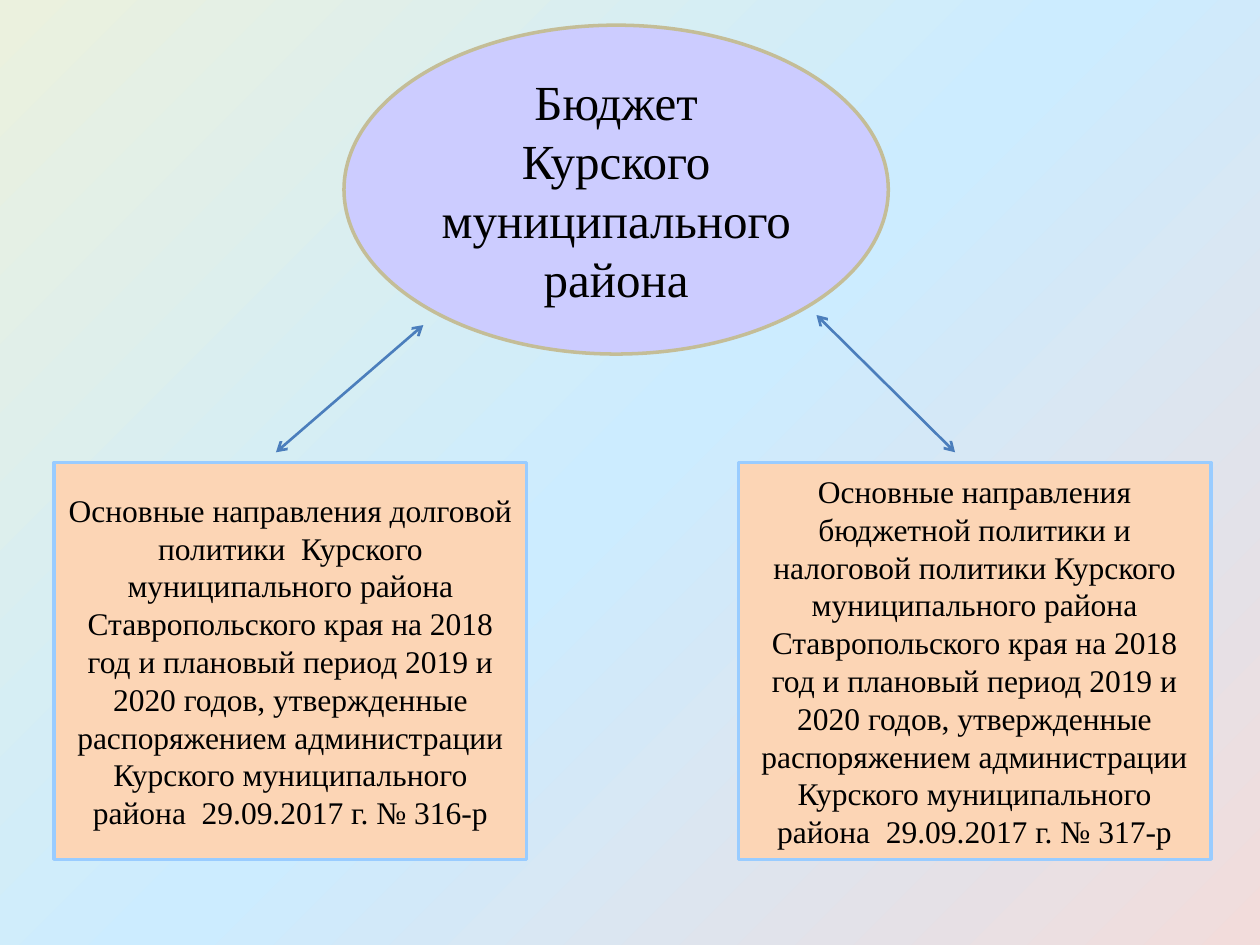
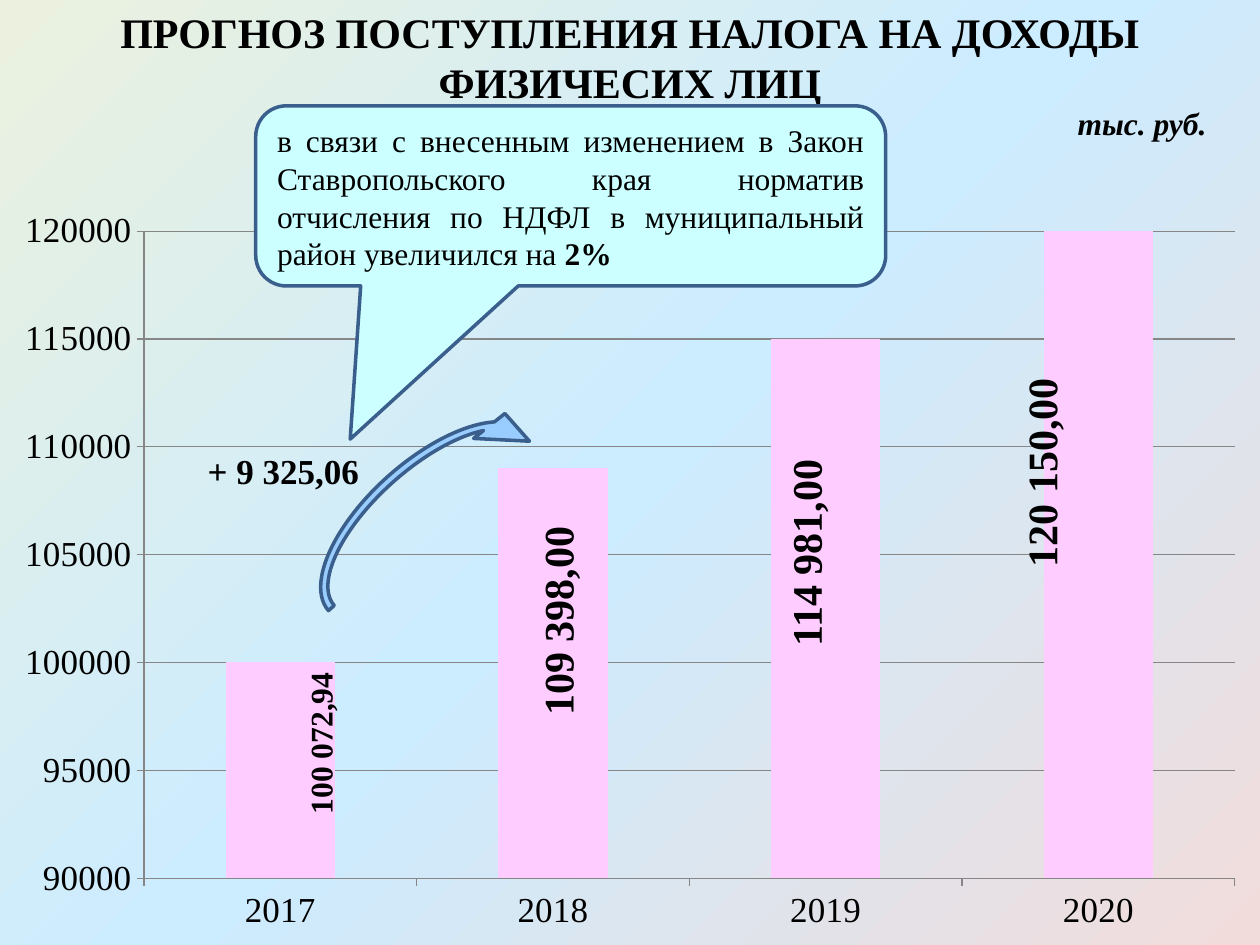
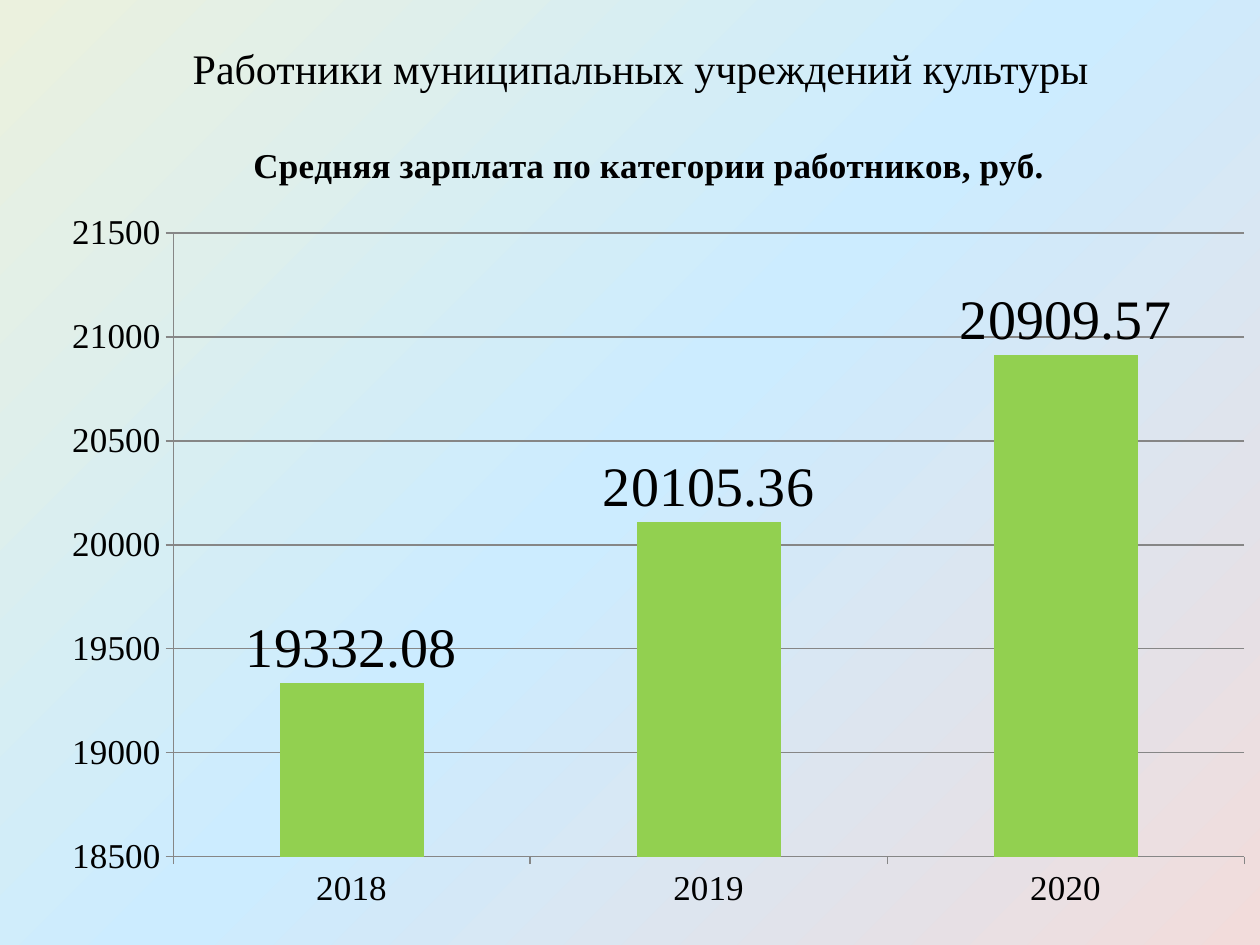
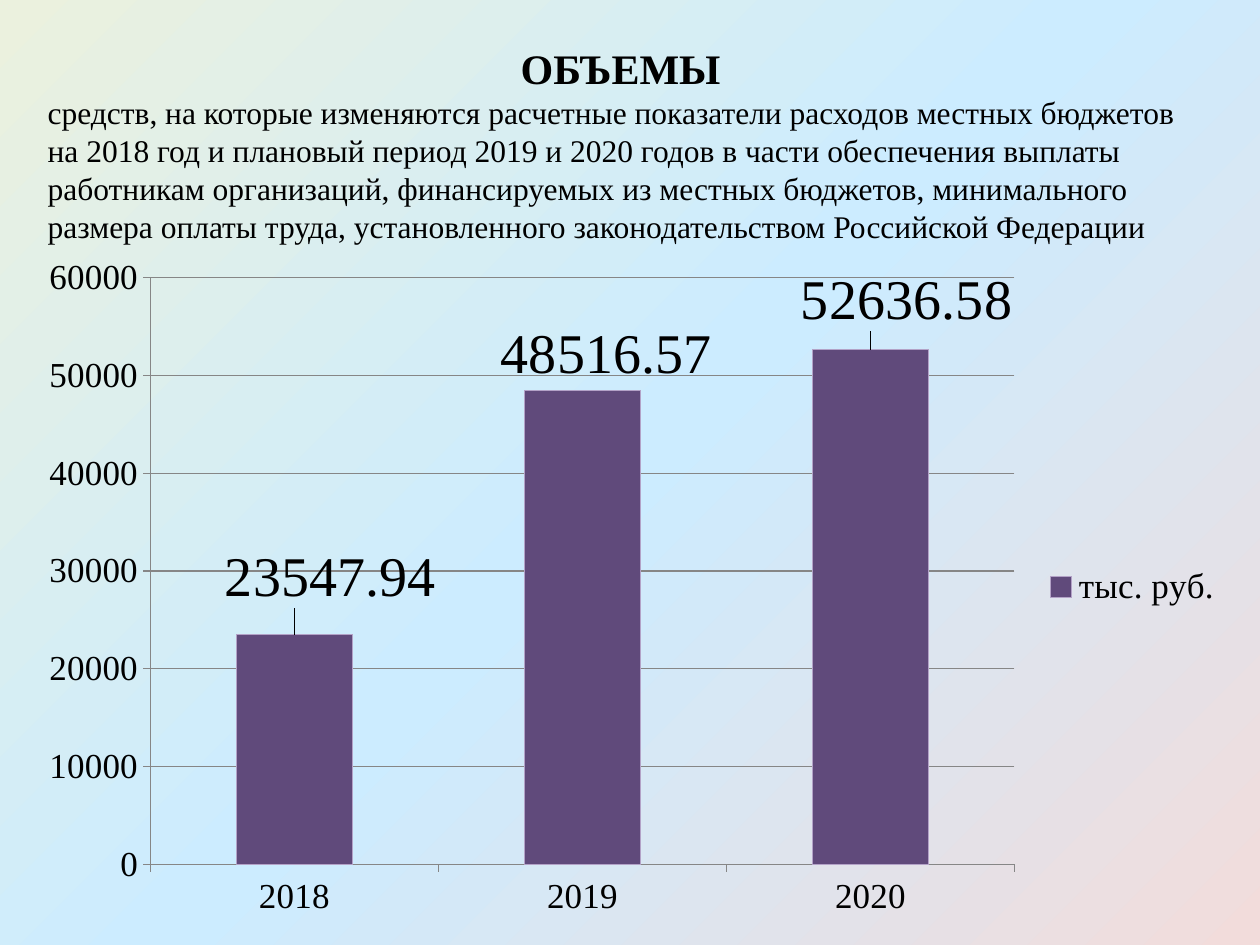
"""Build four slides on the budget of a municipal district."""
import pptx
import pptx.chart.data
import pptx.dml.color
import pptx.enum.chart
import pptx.enum.shapes
import pptx.enum.text
import pptx.oxml
import pptx.oxml.ns
import pptx.util
from lxml import etree

Inches = pptx.util.Inches
Pt = pptx.util.Pt
RGB = pptx.dml.color.RGBColor.from_string
ALIGN = pptx.enum.text.PP_ALIGN
SHAPE = pptx.enum.shapes.MSO_SHAPE
qn = pptx.oxml.ns.qn
FONT = "Times New Roman"
COLORS = {
    "text": "000000",
    "back_start": "F2DCDB",
    "back_middle": "CCECFF",
    "back_end": "EBF1DE",
    "ellipse": "CCCCFF",
    "ellipse_line": "C4BD97",
    "box": "FCD5B5",
    "box_line": "99CCFF",
    "arrow": "4B7EBC",
    "curve": "99CCFF",
    "callout": "CCFFFF",
    "callout_line": "3A5F8C",
    "grid": "868686",
    "tax": "FFCCFF",
    "salary": "92D050",
    "wage": "604A7B",
    "wage_line": "B3A2C7",
}


def add_text(slide, box, paragraphs, preset=None, fill=None, line=None, anchor="TOP"):
    """Add a text box or preset shape; paragraphs are (alignment, runs), runs (text, size, style)."""
    lengths = [Inches(value) for value in box]
    if preset is None:
        shape = slide.shapes.add_textbox(*lengths)
        shape.text_frame.auto_size = pptx.enum.text.MSO_AUTO_SIZE.SHAPE_TO_FIT_TEXT
    else:
        shape = slide.shapes.add_shape(preset, *lengths)
        shape.shadow.inherit = False
        shape.fill.solid()
        shape.fill.fore_color.rgb = RGB(COLORS[fill])
        shape.line.color.rgb = RGB(COLORS[line])
        shape.line.width = Pt(2)
    frame = shape.text_frame
    frame.word_wrap = True
    frame.vertical_anchor = getattr(pptx.enum.text.MSO_ANCHOR, anchor)
    for index, (alignment, runs) in enumerate(paragraphs):
        paragraph = frame.add_paragraph() if index else frame.paragraphs[0]
        paragraph.alignment = alignment
        for text, size, style in runs:
            if text == "\n":
                paragraph.add_line_break()
                continue
            run = paragraph.add_run()
            run.text = text
            run.font.name = FONT
            run.font.size = Pt(size)
            run.font.bold = "b" in style
            run.font.italic = "i" in style
            run.font.color.rgb = RGB(COLORS["text"])
    return shape


def add_column_chart(slide, box, name, values, fill, line=None, labels=False):
    """Add a column chart of one series, keyed by year."""
    data = pptx.chart.data.CategoryChartData()
    data.categories = list(values)
    data.add_series(name, list(values.values()))
    chart = slide.shapes.add_chart(
        pptx.enum.chart.XL_CHART_TYPE.COLUMN_CLUSTERED, *[Inches(value) for value in box], data
    ).chart
    chart.has_legend = False
    chart.has_title = False
    chart.font.size = Pt(10)
    chart.font.name = "Calibri"
    chart.font.color.rgb = RGB(COLORS["text"])
    for axis in (chart.category_axis, chart.value_axis):
        axis.major_tick_mark = pptx.enum.chart.XL_TICK_MARK.OUTSIDE
        axis.tick_labels.font.size = Pt(20)
        axis.tick_labels.font.name = FONT
        axis.format.line.color.rgb = RGB(COLORS["grid"])
    chart.value_axis.has_major_gridlines = True
    chart.value_axis.major_gridlines.format.line.color.rgb = RGB(COLORS["grid"])
    plot = chart.plots[0]
    plot.gap_width = 150
    plot.vary_by_categories = False
    series = plot.series[0]
    series.format.fill.solid()
    series.format.fill.fore_color.rgb = RGB(COLORS[fill])
    if line:
        series.format.line.color.rgb = RGB(COLORS[line])
    if labels:
        series.data_labels.show_value = True
        series.data_labels.position = pptx.enum.chart.XL_LABEL_POSITION.OUTSIDE_END
        series.data_labels.font.size = Pt(32)
        series.data_labels.font.name = FONT
    return chart


presentation = pptx.Presentation()
presentation.slide_width = Inches(10)
presentation.slide_height = Inches(7.5)

master = presentation.slide_master
master.background.fill.solid()
background = master.element.xpath(".//p:bgPr")[0]
stops = "".join(
    f'<a:gs pos="{position}"><a:srgbClr val="{COLORS[key]}"/></a:gs>'
    for position, key in ((0, "back_start"), (50000, "back_middle"), (100000, "back_end"))
)
background.replace(background[0], pptx.oxml.parse_xml(
    f'<a:gradFill {pptx.oxml.ns.nsdecls("a")} rotWithShape="1"><a:gsLst>{stops}</a:gsLst>'
    '<a:path path="circle"><a:fillToRect l="100000" t="100000"/></a:path></a:gradFill>'
))
budget_slide, tax_slide, salary_slide, wage_slide = [
    presentation.slides.add_slide(presentation.slide_layouts[6]) for _ in range(4)
]

add_text(
    budget_slide, (2.73, 0.2, 4.32, 2.61),
    [(ALIGN.CENTER, [("Бюджет", 28, ""), ("\n", 28, ""), ("Курского муниципального района", 28, "")])],
    SHAPE.OVAL, "ellipse", "ellipse_line", "MIDDLE",
)
for left, policy, number in (
    (5.86, "бюджетной политики и налоговой политики ", 317),
    (0.43, "долговой политики  ", 316),
):
    text = (
        f"Основные направления {policy}Курского муниципального района Ставропольского края "
        "на 2018 год и плановый период 2019 и 2020 годов, утвержденные распоряжением "
        f"администрации Курского муниципального района  29.09.2017 г. № {number}-р"
    )
    add_text(
        budget_slide, (left, 3.67, 3.75, 3.15), [(ALIGN.CENTER, [(text, 18, "")])],
        SHAPE.RECTANGLE, "box", "box_line", "MIDDLE",
    )
for ends in ((6.48, 2.5, 7.58, 3.59), (2.19, 3.59, 3.36, 2.58)):
    arrow = budget_slide.shapes.add_connector(
        pptx.enum.shapes.MSO_CONNECTOR.STRAIGHT, *[Inches(value) for value in ends]
    )
    arrow.line.color.rgb = RGB(COLORS["arrow"])
    arrow.line.width = Pt(1.5)
    outline = arrow.element.spPr.find(qn("a:ln"))
    for tag in ("a:headEnd", "a:tailEnd"):
        etree.SubElement(outline, qn(tag), type="arrow")
    etree.SubElement(arrow.element.spPr, qn("a:effectLst"))

add_text(tax_slide, (0, 0, 10, 1.21), [
    (ALIGN.CENTER, [("ПРОГНОЗ ПОСТУПЛЕНИЯ НАЛОГА НА ДОХОДЫ ФИЗИЧЕСИХ ЛИЦ", 24, "b")]),
])
tax_chart = add_column_chart(
    tax_slide, (0, 1.56, 10, 5.94), "Series 1",
    {"2017": 100000, "2018": 109000, "2019": 115000, "2020": 120000}, "tax",
)
tax_chart.value_axis.maximum_scale = 120000
for box, text, size, alignment in (
    ((1.8, 5.7, 1.48, 0.4), "100 072,94", 18, ALIGN.CENTER),
    ((3.52, 4.63, 1.8, 0.5), "109 398,00", 24, ALIGN.LEFT),
    ((5.49, 4.08, 1.8, 0.5), "114 981,00", 24, ALIGN.LEFT),
    ((7.36, 3.45, 1.8, 0.5), "120 150,00", 24, ALIGN.LEFT),
):
    add_text(tax_slide, box, [(alignment, [(text, size, "b")])]).rotation = 270
growth_arrow = add_text(
    tax_slide, (2.21, 3.53, 2.38, 1.22), [], SHAPE.CIRCULAR_ARROW, "curve", "callout_line"
)
growth_arrow.rotation = 318.3
for index, value in enumerate((0.05, 11.42, 206.5, 108, 0.13)):
    growth_arrow.adjustments[index] = value
add_text(tax_slide, (1.38, 3.52, 1.67, 0.77), [(ALIGN.CENTER, [(" + 9 325,06", 20, "b")])])
callout = add_text(
    tax_slide, (2.03, 0.84, 5, 1.43),
    [(ALIGN.JUSTIFY, [
        ("в связи с внесенным изменением в Закон Ставропольского края норматив отчисления "
         "по НДФЛ в муниципальный район увеличился на ", 18, ""),
        ("2%", 18, "b"),
    ])],
    SHAPE.ROUNDED_RECTANGULAR_CALLOUT, "callout", "callout_line",
)
for index, value in enumerate((-0.35, 1.35, 0.17)):
    callout.adjustments[index] = value
add_text(tax_slide, (8.28, 0.78, 1.57, 0.4), [(ALIGN.CENTER, [("тыс. руб.", 18, "bi")])])

add_text(salary_slide, (0.91, 0.29, 8.35, 0.5), [
    (ALIGN.CENTER, [("Работники муниципальных учреждений культуры", 24, "")]),
])
salary_name = "Средняя зарплата по категории работников, руб."
salary_chart = add_column_chart(
    salary_slide, (0.43, 0.91, 9.45, 6.3), salary_name,
    {"2018": 19332.08, "2019": 20105.36, "2020": 20909.57}, "salary", "salary", True,
)
salary_chart.has_title = True
title_run = salary_chart.chart_title.text_frame.paragraphs[0].add_run()
title_run.text = salary_name
title_run.font.size = Pt(20)
title_run.font.name = FONT
title_run.font.bold = True
salary_chart.chart_title.include_in_layout = False
plot_area = salary_chart.element.chart.plotArea
for old_layout in plot_area.findall(qn("c:layout")):
    plot_area.remove(old_layout)
plot_area.insert(0, pptx.oxml.parse_xml(
    f'<c:layout {pptx.oxml.ns.nsdecls("c")}><c:manualLayout><c:layoutTarget val="inner"/>'
    '<c:xMode val="edge"/><c:yMode val="edge"/><c:x val="0.1"/><c:y val="0.15"/>'
    '<c:w val="0.9"/><c:h val="0.79"/></c:manualLayout></c:layout>'
))

add_text(wage_slide, (0.28, 0.29, 9.29, 2.02), [
    (ALIGN.CENTER, [("ОБЪЕМЫ", 24, "b")]),
    (ALIGN.LEFT, [(
        "средств, на которые изменяются расчетные показатели расходов местных бюджетов "
        "на 2018 год и плановый период 2019 и 2020 годов в части обеспечения выплаты "
        "работникам организаций, финансируемых из местных бюджетов, минимального размера "
        "оплаты труда, установленного законодательством Российской Федерации", 18, "")]),
])
wage_chart = add_column_chart(
    wage_slide, (0.2, 1.94, 9.61, 5.44), "тыс. руб.",
    {"2018": 23547.94, "2019": 48516.57, "2020": 52636.58}, "wage", "wage_line", True,
)
wage_chart.has_legend = True
wage_chart.legend.position = pptx.enum.chart.XL_LEGEND_POSITION.RIGHT
wage_chart.legend.include_in_layout = False
wage_chart.legend.font.size = Pt(20)
wage_chart.legend.font.name = FONT
wage_series = wage_chart.plots[0].series[0]
for index, (shift_x, shift_y) in enumerate(((0.03, -0.03), (0.02, 0), (0.03, -0.02))):
    label = wage_series.points[index].data_label
    label.position = pptx.enum.chart.XL_LABEL_POSITION.OUTSIDE_END
    label.font.size = Pt(32)
    label.font.name = FONT
    label_index = wage_chart.element.xpath(f'.//c:dLbl/c:idx[@val="{index}"]')[0]
    label_index.addnext(pptx.oxml.parse_xml(
        f'<c:layout {pptx.oxml.ns.nsdecls("c")}><c:manualLayout>'
        f'<c:x val="{shift_x}"/><c:y val="{shift_y}"/></c:manualLayout></c:layout>'
    ))
wage_chart.element.xpath(".//c:ser/c:dLbls")[0].append(pptx.oxml.parse_xml(
    f'<c:extLst {pptx.oxml.ns.nsdecls("c")}><c:ext uri="{{CE6537A1-D6FC-4f65-9D91-7224C49458BB}}" '
    'xmlns:c15="http://schemas.microsoft.com/office/drawing/2012/chart">'
    '<c15:showLeaderLines val="0"/></c:ext></c:extLst>'
))

presentation.save("out.pptx")
